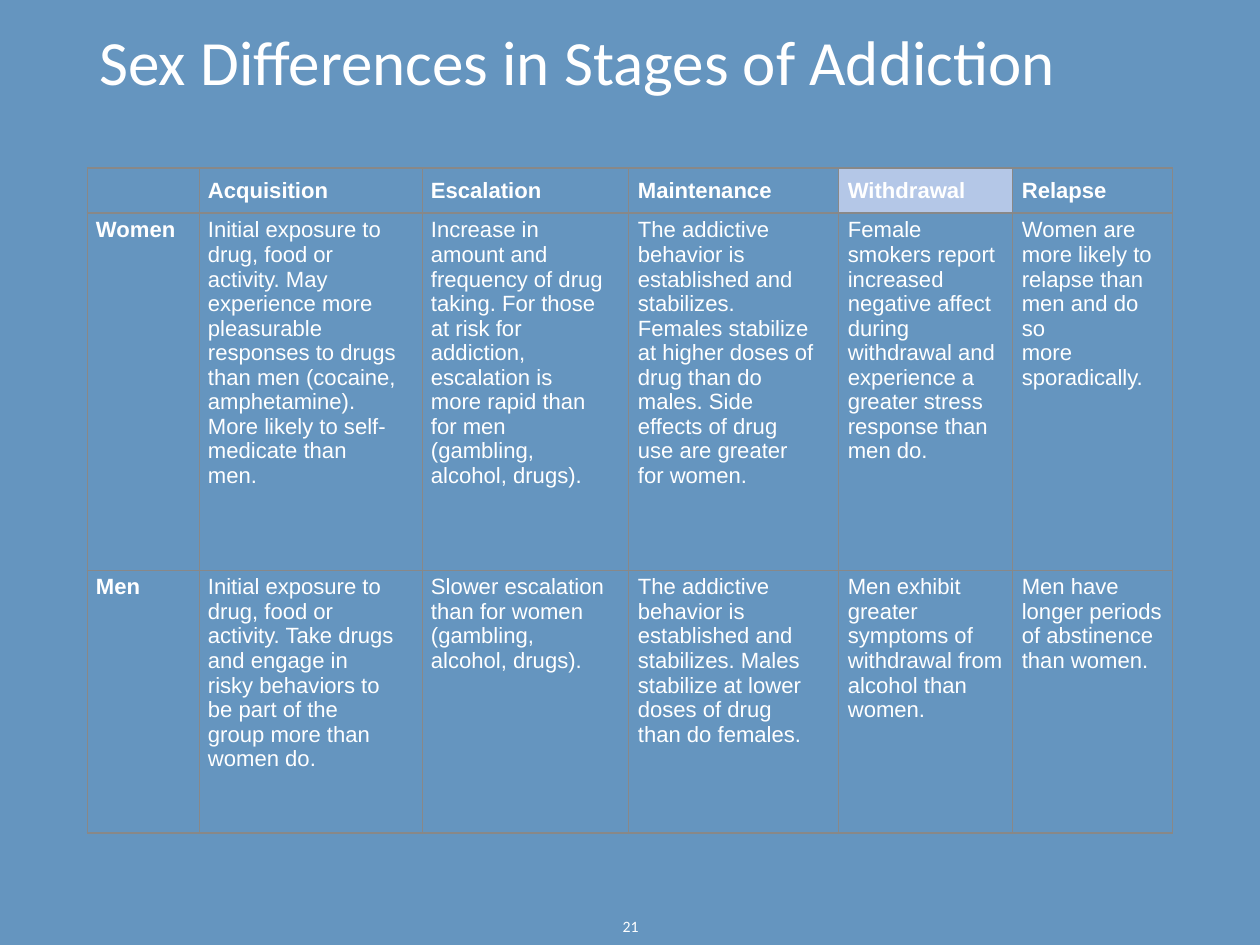
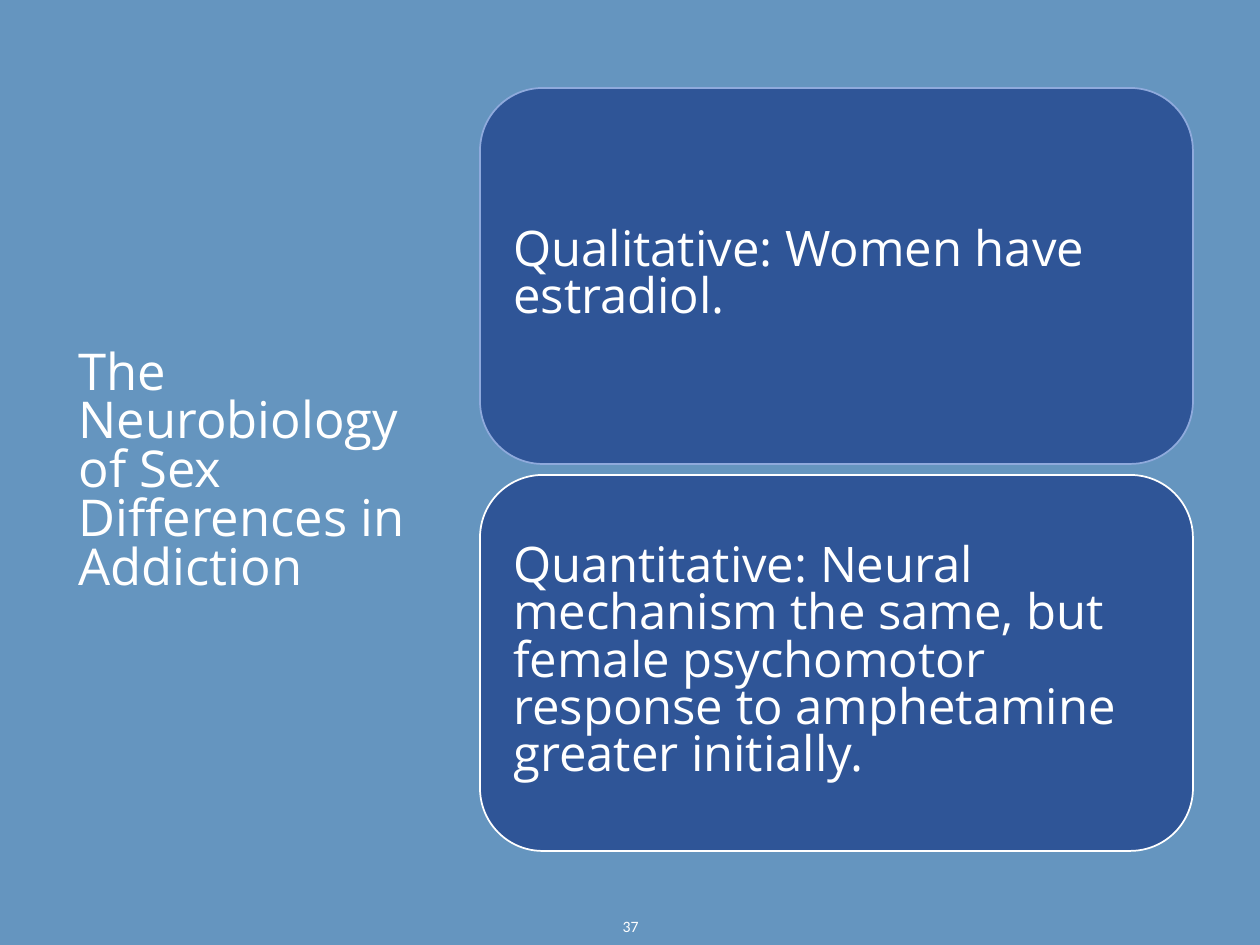
"""Builds two slides on sex differences in addiction: a table of stages and a pair of cards."""
from lxml.etree import SubElement
from pptx import Presentation
from pptx.dml.color import RGBColor
from pptx.enum.shapes import MSO_SHAPE
from pptx.enum.text import MSO_ANCHOR, MSO_AUTO_SIZE, PP_ALIGN
from pptx.oxml.ns import qn
from pptx.util import Emu, Pt

WHITE, BACKGROUND, BORDER = "FFFFFF", "6595BF", "888888"
HIGHLIGHT, CARD, CARD_EDGE = "B4C7E7", "2F5597", "8FAADC"


def px(length):
    return Emu(round(length * 914400 / 126))


def write(frame, text, size, font, spacing=None, align=PP_ALIGN.LEFT, bold=False):
    frame.text = text
    frame.word_wrap = True
    paragraph = frame.paragraphs[0]
    paragraph.alignment = align
    paragraph.line_spacing = spacing
    paragraph.font.size = Pt(size)
    paragraph.font.name = font
    paragraph.font.bold = bold
    paragraph.font.color.rgb = RGBColor.from_string(WHITE)


deck = Presentation()
deck.slide_width, deck.slide_height = px(1260), px(945)

pages = []
for heading, number, box, size, font, spacing in [
    ("Sex Differences in Stages of Addiction", "21", (87, 20, 1086, 90), 36, "Calibri", 0.9),
    ("The Neurobiology of Sex Differences in Addiction", "37", (66, 88, 353, 770), 29, "Open Sans", 0.8),
]:
    page = deck.slides.add_slide(deck.slide_layouts[5])
    page.background.fill.solid()
    page.background.fill.fore_color.rgb = RGBColor.from_string(BACKGROUND)
    title = page.shapes.title
    title.left, title.top, title.width, title.height = map(px, box)
    write(title.text_frame, heading, size, font, spacing)
    title.text_frame.auto_size = MSO_AUTO_SIZE.NONE
    title.text_frame.vertical_anchor = MSO_ANCHOR.MIDDLE
    page_number = page.shapes.add_textbox(px(489), px(901), px(283), px(50)).text_frame
    write(page_number, number, 9, "Calibri", align=PP_ALIGN.CENTER)
    page_number.vertical_anchor = MSO_ANCHOR.MIDDLE
    pages.append(page)
stages_page, neurobiology_page = pages

stages = [
    ["", "Acquisition", "Escalation", "Maintenance", "Withdrawal", "Relapse"],
    [
        "Women",
        "Initial exposure to\ndrug, food or\nactivity. May\nexperience more\npleasurable\nresponses to drugs\n"
        "than men (cocaine,\namphetamine).\nMore likely to self-\nmedicate than\nmen.",
        "Increase in\namount and\nfrequency of drug\ntaking. For those\nat risk for\naddiction,\n"
        "escalation is\nmore rapid than\nfor men\n(gambling,\nalcohol, drugs).",
        "The addictive\nbehavior is\nestablished and\nstabilizes.\nFemales stabilize\nat higher doses of\n"
        "drug than do\nmales. Side\neffects of drug\nuse are greater\nfor women.",
        "Female\nsmokers report\nincreased\nnegative affect\nduring\nwithdrawal and\nexperience a\n"
        "greater stress\nresponse than\nmen do.",
        "Women are\nmore likely to\nrelapse than\nmen and do so\nmore\nsporadically.",
    ],
    [
        "Men",
        "Initial exposure to\ndrug, food or\nactivity. Take drugs\nand engage in\nrisky behaviors to\n"
        "be part of the\ngroup more than\nwomen do.",
        "Slower escalation\nthan for women\n(gambling,\nalcohol, drugs).",
        "The addictive\nbehavior is\nestablished and\nstabilizes. Males\nstabilize at lower\n"
        "doses of drug\nthan do females.",
        "Men exhibit\ngreater\nsymptoms of\nwithdrawal from\nalcohol than\nwomen.",
        "Men have\nlonger periods\nof abstinence\nthan women.",
    ],
]
column_widths = [112, 223, 207, 210, 174, 160]
row_heights = [45, 357, 263]
rule_widths = [1, 1, 0.6, 1]

table = stages_page.shapes.add_table(
    3, 6, px(87), px(168), px(sum(column_widths)), px(sum(row_heights))
).table
table.first_row = table.horz_banding = False
for column, width in zip(table.columns, column_widths):
    column.width = px(width)
for row, height in zip(table.rows, row_heights):
    row.height = px(height)

for r, entries in enumerate(stages):
    for c, entry in enumerate(entries):
        cell = table.cell(r, c)
        write(cell.text_frame, entry.replace("\n", "\v"), 12.6, "Arial", bold=r == 0 or c == 0)
        cell.margin_left = cell.margin_right = px(9)
        cell.margin_top = cell.margin_bottom = px(5)
        cell.vertical_anchor = MSO_ANCHOR.TOP if r else MSO_ANCHOR.MIDDLE
        properties = cell._tc.get_or_add_tcPr()
        for side, weight in zip("LRTB", (0.6, 0.6, rule_widths[r], rule_widths[r + 1])):
            edge = SubElement(properties, qn(f"a:ln{side}"), w=str(Pt(weight)))
            SubElement(SubElement(edge, qn("a:solidFill")), qn("a:srgbClr"), val=BORDER)
        if entry == "Withdrawal":
            cell.fill.solid()
            cell.fill.fore_color.rgb = RGBColor.from_string(HIGHLIGHT)
        else:
            cell.fill.background()

differences = [
    ("Qualitative: Women have estradiol.", CARD_EDGE),
    ("Quantitative: Neural mechanism the same, but female psychomotor response to amphetamine "
     "greater initially.", WHITE),
]
for i, (difference, edge_color) in enumerate(differences):
    card = neurobiology_page.shapes.add_shape(
        MSO_SHAPE.ROUNDED_RECTANGLE, px(480), px(88 + 387 * i), px(713), px(376)
    )
    card.shadow.inherit = False
    card.fill.solid()
    card.fill.fore_color.rgb = RGBColor.from_string(CARD)
    card.line.color.rgb = RGBColor.from_string(edge_color)
    card.line.width = Pt(1)
    write(card.text_frame, difference, 28, "Open Sans", 0.8)
    card.text_frame.margin_left = card.text_frame.margin_right = px(15)
    card.text_frame.vertical_anchor = MSO_ANCHOR.MIDDLE

deck.save("out.pptx")
